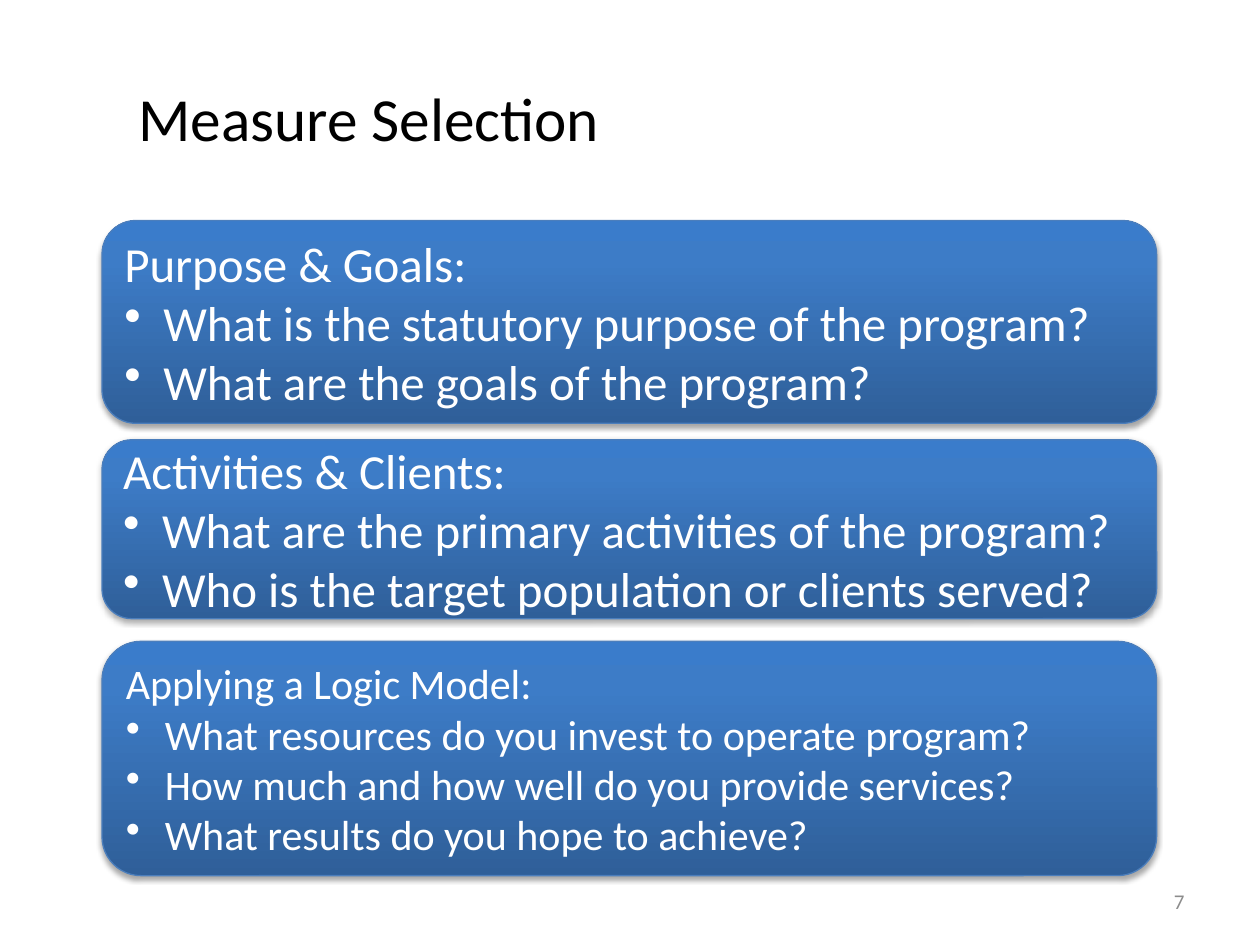
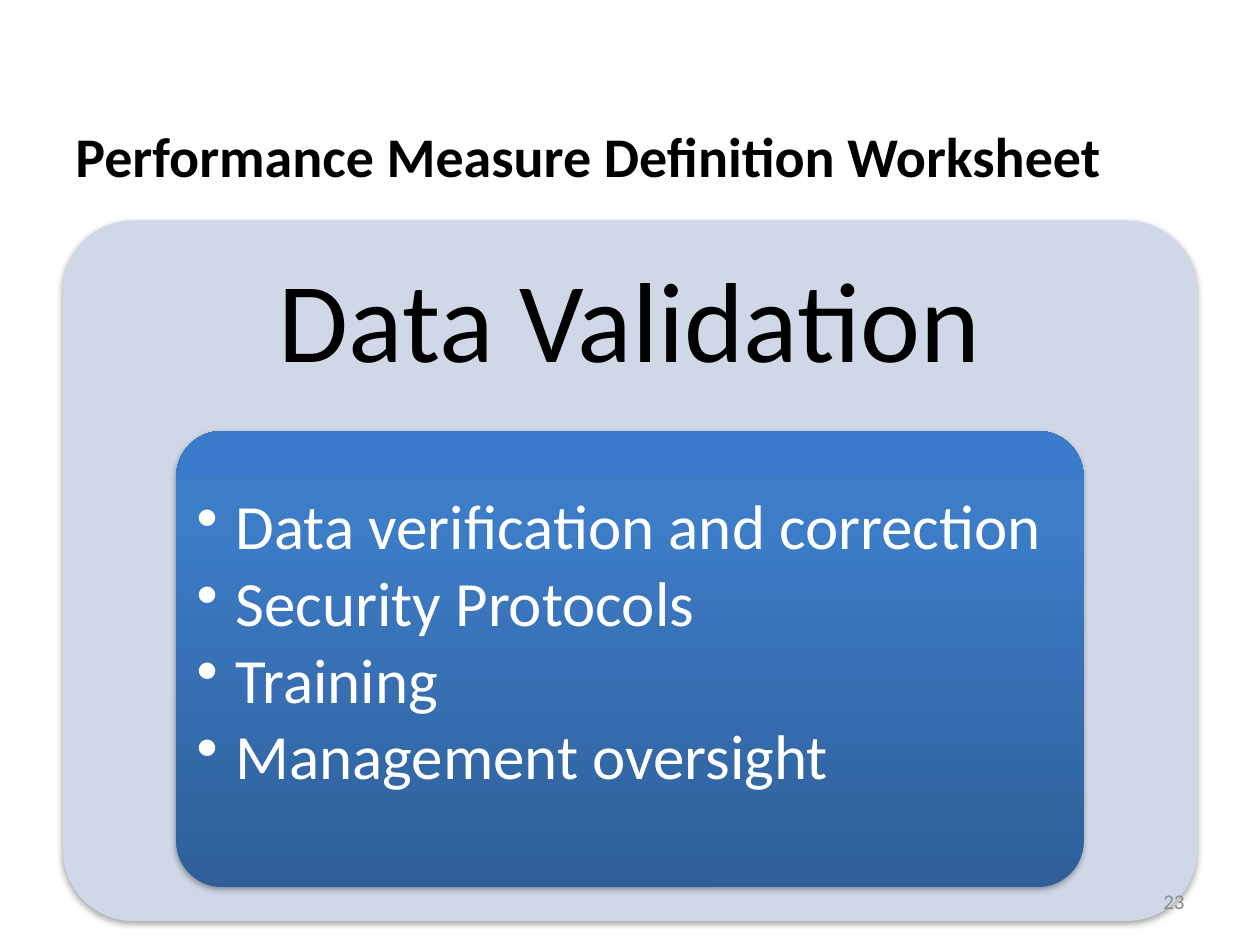
from dataclasses import dataclass

from lxml.etree import SubElement
from pptx import Presentation
from pptx.dml.color import RGBColor
from pptx.enum.shapes import MSO_SHAPE
from pptx.enum.text import MSO_ANCHOR, PP_ALIGN
from pptx.oxml.ns import qn
from pptx.shapes.autoshape import Shape
from pptx.slide import Slide
from pptx.util import Emu, Inches, Pt

SLIDE_WIDTH, SLIDE_HEIGHT = Inches(10), Inches(7.5)
COLUMN, ROW = SLIDE_WIDTH / 100, SLIDE_HEIGHT / 75

FONT = "Calibri"
BLACK, WHITE, GREY = "000000", "FFFFFF", "8C8C8C"
PALE_BLUE, OUTLINE = "D0D8E8", "4B7EBC"
BLUE_GRADIENT = ((0, "2F5F99"), (80, "3D7CC7"), (100, "3A7CCB"))
BULLET_INDENT = Inches(0.31)


@dataclass(frozen=True)
class Area:
    """A place on the grid, in columns and rows."""
    left: float
    top: float
    width: float
    height: float

    def lengths(self) -> tuple[Emu, ...]:
        return (Emu(round(self.left * COLUMN)), Emu(round(self.top * ROW)),
                Emu(round(self.width * COLUMN)), Emu(round(self.height * ROW)))


@dataclass(frozen=True)
class TextStyle:
    size: float
    color: str = BLACK
    bold: bool = False
    align: PP_ALIGN = PP_ALIGN.LEFT
    anchor: MSO_ANCHOR = MSO_ANCHOR.MIDDLE
    line_spacing: float = 1.0
    space_after: float = 0
    insets: tuple[float, float, float, float] = (0.1, 0.05, 0.1, 0.05)


@dataclass(frozen=True)
class Card:
    top: float
    height: float
    size: float
    heading: str
    questions: tuple[str, ...]


NUMBER_AREA = Area(71.7, 69.5, 23.3, 4)
NUMBER_STYLE = TextStyle(12, GREY, align=PP_ALIGN.RIGHT)

CARD_LEFT, CARD_WIDTH = 8.1, 83.7
CARDS = (
    Card(17.5, 16.1, 28, "Purpose & Goals:", (
        "What is the statutory purpose of the program?",
        "What are the goals of the program?")),
    Card(34.9, 14.2, 28, "Activities & Clients:", (
        "What are the primary activities of the program?",
        "Who is the target population or clients served?")),
    Card(50.9, 18.6, 24, "Applying a Logic Model:", (
        "What resources do you invest to operate program?",
        "How much and how well do you provide services?",
        "What results do you hope to achieve?")),
)

VALIDATION_STEPS = ("Data verification and correction", "Security Protocols",
                    "Training", "Management oversight")


def rgb(color: str) -> RGBColor:
    return RGBColor.from_string(color)


def add_bullet(paragraph) -> None:
    properties = paragraph._p.get_or_add_pPr()
    properties.set("marL", str(BULLET_INDENT))
    properties.set("indent", str(-BULLET_INDENT))
    SubElement(properties, qn("a:buChar")).set("char", "•")


def write_text(shape: Shape, style: TextStyle, plain: tuple[str, ...] = (),
               bullets: tuple[str, ...] = ()) -> None:
    """Write the plain lines, then the bulleted ones."""
    frame = shape.text_frame
    frame.word_wrap = True
    frame.vertical_anchor = style.anchor
    (frame.margin_left, frame.margin_top,
     frame.margin_right, frame.margin_bottom) = map(Inches, style.insets)
    for index, line in enumerate(plain + bullets):
        paragraph = frame.add_paragraph() if index else frame.paragraphs[0]
        if index >= len(plain):
            add_bullet(paragraph)
        paragraph.alignment = style.align
        paragraph.line_spacing = style.line_spacing
        paragraph.space_after = Pt(style.space_after)
        run = paragraph.add_run()
        run.text = line
        run.font.name = FONT
        run.font.size = Pt(style.size)
        run.font.bold = style.bold
        run.font.color.rgb = rgb(style.color)


def add_text(slide: Slide, area: Area, style: TextStyle,
             plain: tuple[str, ...] = (), bullets: tuple[str, ...] = ()) -> None:
    write_text(slide.shapes.add_textbox(*area.lengths()), style, plain, bullets)


def fill_with_gradient(shape: Shape) -> None:
    shape.fill.gradient()
    shape.fill.gradient_angle = 90
    stops = shape._element.spPr.find(".//" + qn("a:gsLst"))
    for stop in list(stops):
        stops.remove(stop)
    for percent, color in BLUE_GRADIENT:
        stop = SubElement(stops, qn("a:gs"), pos=str(percent * 1000))
        SubElement(stop, qn("a:srgbClr"), val=color)


def add_soft_shadow(shape: Shape) -> None:
    shape.shadow.inherit = False
    effects = shape._element.spPr.find(qn("a:effectLst"))
    shadow = SubElement(effects, qn("a:outerShdw"), blurRad=str(Pt(3.1)),
                        dist=str(Pt(1.8)), dir="5400000", rotWithShape="0")
    color = SubElement(shadow, qn("a:srgbClr"), val=BLACK)
    SubElement(color, qn("a:alpha"), val="35000")


def add_panel(slide: Slide, area: Area, corner: float = 0.1667,
              fill: str | None = None, outline: str | None = None) -> Shape:
    """Add a rounded panel, blue gradient unless a fill is given."""
    panel = slide.shapes.add_shape(MSO_SHAPE.ROUNDED_RECTANGLE, *area.lengths())
    panel.adjustments[0] = corner
    if fill:
        panel.fill.solid()
        panel.fill.fore_color.rgb = rgb(fill)
    else:
        fill_with_gradient(panel)
    if outline:
        panel.line.color.rgb = rgb(outline)
        panel.line.width = Pt(0.75)
    else:
        panel.line.fill.background()
    add_soft_shadow(panel)
    return panel


def add_slide(presentation) -> Slide:
    return presentation.slides.add_slide(presentation.slide_layouts[6])


def add_number(slide: Slide, number: int) -> None:
    add_text(slide, NUMBER_AREA, NUMBER_STYLE, (str(number),))


def build_measure_selection(presentation) -> None:
    slide = add_slide(presentation)
    add_text(slide, Area(10, 3, 85, 12.5), TextStyle(35), ("Measure Selection",))
    add_number(slide, 7)
    for card in CARDS:
        area = Area(CARD_LEFT, card.top, CARD_WIDTH, card.height)
        panel = add_panel(slide, area, outline=OUTLINE)
        write_text(panel, TextStyle(card.size, WHITE),
                   (card.heading,), card.questions)


def build_data_validation(presentation) -> None:
    slide = add_slide(presentation)
    add_text(slide, Area(5, 3, 90, 12.5),
             TextStyle(32, bold=True, anchor=MSO_ANCHOR.BOTTOM),
             ("Performance Measure Definition Worksheet",))
    add_panel(slide, Area(5, 17.5, 90, 55.6), 0.1, fill=PALE_BLUE)
    add_text(slide, Area(5, 17.5, 90, 16.7),
             TextStyle(65, align=PP_ALIGN.CENTER, line_spacing=0.9,
                       insets=(0.27,) * 4), ("Data Validation",))
    add_panel(slide, Area(14, 34.2, 72, 36.2), 0.1)
    add_text(slide, Area(15.1, 35.3, 69.9, 34),
             TextStyle(36, WHITE, anchor=MSO_ANCHOR.TOP, line_spacing=0.9,
                       space_after=5, insets=(0.05, 0.4, 0.05, 0.04)),
             bullets=VALIDATION_STEPS)
    add_number(slide, 23)


def main() -> None:
    presentation = Presentation()
    presentation.slide_width = SLIDE_WIDTH
    presentation.slide_height = SLIDE_HEIGHT
    build_measure_selection(presentation)
    build_data_validation(presentation)
    presentation.save("out.pptx")


if __name__ == "__main__":
    main()
